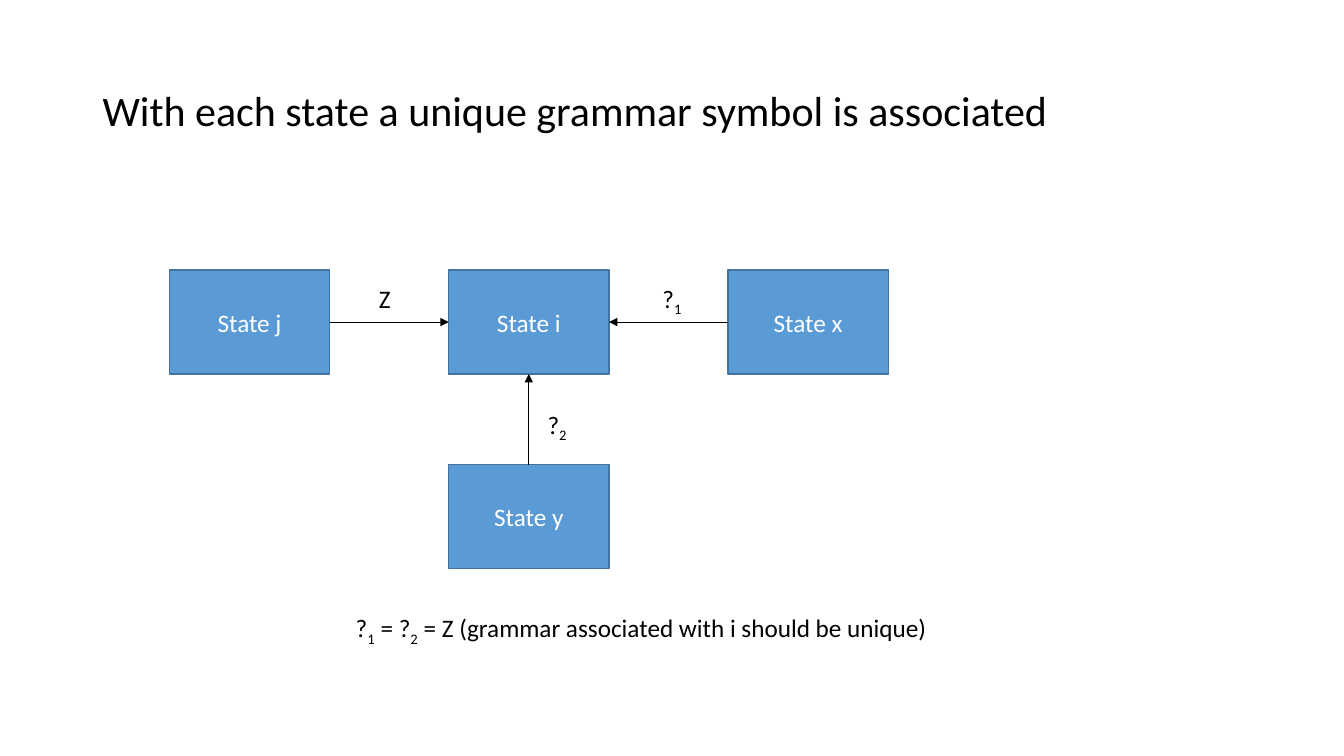
from lxml import etree
from pptx import Presentation
from pptx.dml.color import RGBColor
from pptx.enum.shapes import MSO_CONNECTOR, MSO_SHAPE
from pptx.enum.text import MSO_ANCHOR as ANCHOR, PP_ALIGN as ALIGN
from pptx.oxml.ns import qn
from pptx.util import Emu, Pt

PX = 9144  # 100 px to the inch
FONT = "Calibri"
COLORS = {"text": "000000", "box_text": "FFFFFF", "box": "5B9BD5", "border": "43739E"}
BOX_WIDTH, BOX_HEIGHT = 159, 103
COLUMN_LEFT, COLUMN_STEP = 168, 277
ROW_TOP, ROW_STEP = 268, 193
TOP, LEFT, BOTTOM, RIGHT = range(4)


def px(*lengths):
    return [Emu(length * PX) for length in lengths]


def color(name):
    return RGBColor.from_string(COLORS[name])


def write(frame, text, size, color_name, align):
    """Fill the frame; the character after each underscore is a subscript."""
    frame.word_wrap = True
    para = frame.paragraphs[0]
    para.alignment = align
    para.font.name, para.font.size = FONT, Pt(size)
    para.font.color.rgb = color(color_name)
    first, *others = text.split("_")
    para.add_run().text = first
    for part in others:
        span = para.add_run()
        span.text = part[0]
        span._r.get_or_add_rPr().set("baseline", "-25000")
        if part[1:]:
            para.add_run().text = part[1:]
    return para


def add_text(page, area, text, size=18, align=ALIGN.LEFT, anchor=ANCHOR.TOP):
    frame = page.shapes.add_textbox(*px(*area)).text_frame
    frame.vertical_anchor = anchor
    return write(frame, text, size, "text", align)


def add_state(page, name, column, row):
    left, top = COLUMN_LEFT + column * COLUMN_STEP, ROW_TOP + row * ROW_STEP
    box = page.shapes.add_shape(
        MSO_SHAPE.RECTANGLE, *px(left, top, BOX_WIDTH, BOX_HEIGHT))
    box.shadow.inherit = False
    box.fill.solid()
    box.fill.fore_color.rgb = color("box")
    box.line.color.rgb = color("border")
    box.line.width = Pt(1)
    box.text_frame.vertical_anchor = ANCHOR.MIDDLE
    write(box.text_frame, f"State {name}", 18, "box_text", ALIGN.CENTER)
    return box


def add_arrow(page, start, start_side, end, end_side):
    arrow = page.shapes.add_connector(MSO_CONNECTOR.STRAIGHT, 0, 0, 0, 0)
    arrow.begin_connect(start, start_side)
    arrow.end_connect(end, end_side)
    arrow.line.color.rgb = color("text")
    arrow.line.width = Pt(0.5)
    etree.SubElement(arrow.line._get_or_add_ln(), qn("a:tailEnd"), type="triangle")
    etree.SubElement(arrow._element.spPr, qn("a:effectLst"))


def main():
    deck = Presentation()
    deck.slide_width, deck.slide_height = px(1333, 750)
    page = deck.slides.add_slide(deck.slide_layouts[6])

    title = add_text(page, (92, 40, 1150, 145),
                     "With each state a unique grammar symbol is associated",
                     size=30, anchor=ANCHOR.MIDDLE)
    title.line_spacing = 0.9

    places = {"j": (0, 0), "i": (1, 0), "x": (2, 0), "y": (1, 1)}
    states = {name: add_state(page, name, *place) for name, place in places.items()}

    for name, start_side, end_side in (
            ("j", RIGHT, LEFT), ("x", LEFT, RIGHT), ("y", TOP, BOTTOM)):
        add_arrow(page, states[name], start_side, states["i"], end_side)

    for symbol, left, top in (("Z", 359, 276), ("?_1", 644, 276), ("?_2", 530, 401)):
        add_text(page, (left, top, 45, 40), symbol, align=ALIGN.CENTER)

    add_text(page, (343, 603, 602, 40),
             "?_1 = ?_2 = Z (grammar associated with i should be unique)")
    deck.save("out.pptx")


if __name__ == "__main__":
    main()
